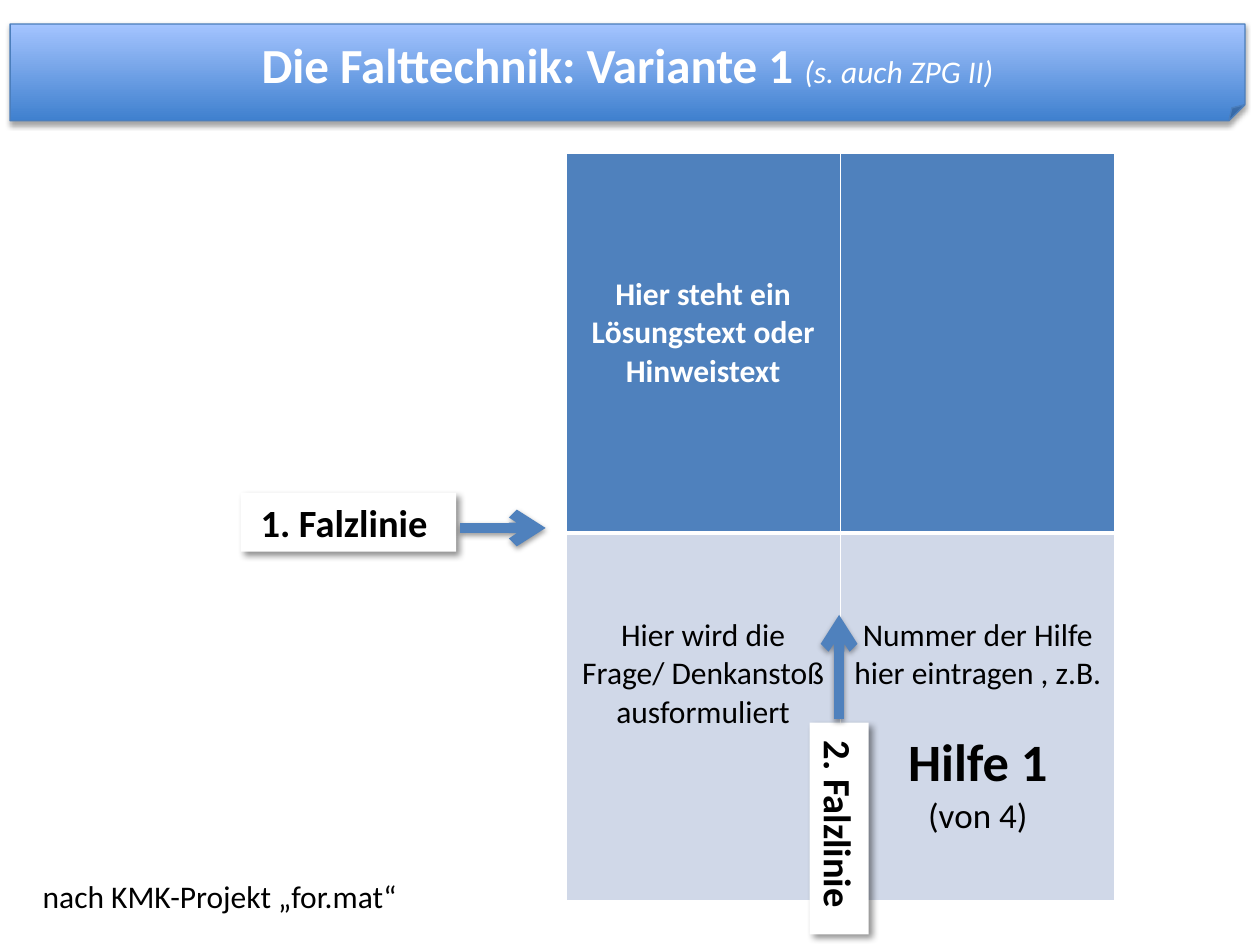
"""Build the slide that explains the folding technique, variant 1."""
from lxml.etree import SubElement
from pptx import Presentation
from pptx.dml.color import RGBColor
from pptx.enum.shapes import MSO_CONNECTOR, MSO_SHAPE
from pptx.enum.text import MSO_ANCHOR, MSO_AUTO_SIZE, PP_ALIGN
from pptx.oxml import parse_xml
from pptx.oxml.ns import nsdecls, qn
from pptx.util import Pt

THEME = {
    "font": "Calibri",
    "white": "FFFFFF", "black": "000000", "blue": "4F81BD", "pale": "D0D8E8",
    "edge": "4B7EBC", "grad": ("3F80CE", "A4C4FF"),
    "styles": {
        "title": {"size": Pt(28), "bold": True, "color": "white"},
        "source": {"size": Pt(18), "italic": True, "color": "white"},
        "head": {"size": Pt(18), "bold": True, "color": "white"},
        "body": {"size": Pt(18), "bold": False, "color": "black"},
        "number": {"size": Pt(30), "bold": True, "color": "black"},
        "count": {"size": Pt(20), "bold": False, "color": "black"},
        "label": {"size": Pt(22), "bold": True, "color": "black"},
    },
    "shadows": {
        "title": (35, 3.1, 1.8, 90), "label": (43, 4, 3, 45), "arrow": (38, 3.1, 1.6, 90),
    },
}
LINE = 22
TITLE = [("Die Falttechnik: Variante 1 ", "title"), ("(s. auch ZPG II)", "source")]
NOTE = [("nach KMK-Projekt „for.mat“", "body")]
ROWS = [
    {"height": 216.7, "fill": "blue", "skip": 3, "cells": [
        [("Hier steht ein Lösungstext oder Hinweistext", "head", 0)],
        [],
    ]},
    {"height": 210.2, "fill": "pale", "skip": 2, "cells": [
        [("Hier wird die", "body", 0), ("Frage/ Denkanstoß ausformuliert", "body", 0)],
        [("Nummer der Hilfe hier eintragen , z.B.", "body", 0),
         ("Hilfe 1", "number", LINE), ("(von 4)", "count", 0)],
    ]},
]
BORDERS = [{"L": 1, "R": 1, "T": 1, "B": 3}, {"L": 1, "R": 1, "T": 3, "B": 1}]
TABLE = (323.3, 87.8, 314, 426.9)
LABELS = [
    {"text": "1. Falzlinie ", "box": (137.5, 281.5, 123.2, 33.8), "turn": 0,
     "arrow": (262.8, 301.7, 311.8, 301.7)},
    {"text": "2. Falzlinie ", "box": (419, 456.5, 121, 33.8), "turn": 90,
     "arrow": (479.5, 411.1, 479.5, 351.4)},
]


def rgb(name):
    return RGBColor.from_string(THEME.get(name, name))


def pts(values):
    return [Pt(v) for v in values]


def write(p, runs, align=PP_ALIGN.CENTER):
    p.alignment = align
    for text, style in runs:
        r = p.add_run()
        r.text = text
        r.font.name = THEME["font"]
        for key, value in THEME["styles"][style].items():
            if key == "color":
                r.font.color.rgb = rgb(value)
            else:
                setattr(r.font, key, value)


def add_shadow(sp, kind):
    alpha, blur, dist, angle = THEME["shadows"][kind]
    pr = sp._element.spPr
    effects = pr.find(qn("a:effectLst"))
    if effects is None:
        effects = SubElement(pr, qn("a:effectLst"))
    effects.append(parse_xml(
        f'<a:outerShdw {nsdecls("a")} blurRad="{Pt(blur)}" dist="{Pt(dist)}" '
        f'dir="{angle * 60000}" rotWithShape="0"><a:srgbClr val="{THEME["black"]}">'
        f'<a:alpha val="{alpha * 1000}"/></a:srgbClr></a:outerShdw>'))


def add_box(s, kind, box, runs, shadow):
    sp = s.shapes.add_shape(kind, *pts(box))
    sp.shadow.inherit = False
    add_shadow(sp, shadow)
    sp.text_frame.word_wrap = True
    write(sp.text_frame.paragraphs[0], runs)
    return sp


def add_title(s):
    sp = add_box(s, MSO_SHAPE.FOLDED_CORNER, (5.8, 13.7, 705.6, 55.4), TITLE, "title")
    sp.fill.gradient()
    sp.fill.gradient_angle = 90
    for stop, color in zip(sp.fill.gradient_stops, THEME["grad"]):
        stop.color.rgb = rgb(color)
    sp.line.color.rgb = rgb("edge")
    sp.line.width = Pt(0.75)
    sp.text_frame.vertical_anchor = MSO_ANCHOR.MIDDLE


def fill_cell(cell, row, borders, paragraphs):
    pr = cell._tc.get_or_add_tcPr()
    for side, width in borders.items():
        pr.append(parse_xml(
            f'<a:ln{side} {nsdecls("a")} w="{Pt(width)}"><a:solidFill>'
            f'<a:srgbClr val="{THEME["white"]}"/></a:solidFill></a:ln{side}>'))
    cell.fill.solid()
    cell.fill.fore_color.rgb = rgb(row["fill"])
    cell.margin_top = Pt(3.6 + row["skip"] * LINE)
    tf = cell.text_frame
    for i, (text, style, gap) in enumerate(paragraphs):
        p = tf.add_paragraph() if i else tf.paragraphs[0]
        p.space_before = Pt(gap)
        write(p, [(text, style)])


def add_fold_table(s):
    table = s.shapes.add_table(len(ROWS), 2, *pts(TABLE)).table
    table.horz_banding = False
    table.first_row = False
    for i, row in enumerate(ROWS):
        table.rows[i].height = Pt(row["height"])
        for j, paragraphs in enumerate(row["cells"]):
            fill_cell(table.cell(i, j), row, BORDERS[i], paragraphs)


def add_label(s, label):
    sp = add_box(s, MSO_SHAPE.RECTANGLE, label["box"], [(label["text"], "label")], "label")
    sp.fill.solid()
    sp.fill.fore_color.rgb = rgb("white")
    sp.line.fill.background()
    sp.rotation = label["turn"]
    sp.text_frame.auto_size = MSO_AUTO_SIZE.SHAPE_TO_FIT_TEXT
    arrow = s.shapes.add_connector(MSO_CONNECTOR.STRAIGHT, *pts(label["arrow"]))
    arrow.line.color.rgb = rgb("blue")
    arrow.line.width = Pt(6)
    SubElement(arrow.line._get_or_add_ln(), qn("a:tailEnd"), type="arrow")
    add_shadow(arrow, "arrow")


def add_note(s):
    tf = s.shapes.add_textbox(*pts((17.3, 497.5, 226, 29))).text_frame
    tf.word_wrap = True
    tf.auto_size = MSO_AUTO_SIZE.SHAPE_TO_FIT_TEXT
    write(tf.paragraphs[0], NOTE, PP_ALIGN.LEFT)


def main():
    prs = Presentation()
    prs.slide_width, prs.slide_height = pts((720, 540))
    s = prs.slides.add_slide(prs.slide_layouts[6])
    add_fold_table(s)
    for label in LABELS:
        add_label(s, label)
    add_note(s)
    add_title(s)
    prs.save("out.pptx")


if __name__ == "__main__":
    main()
